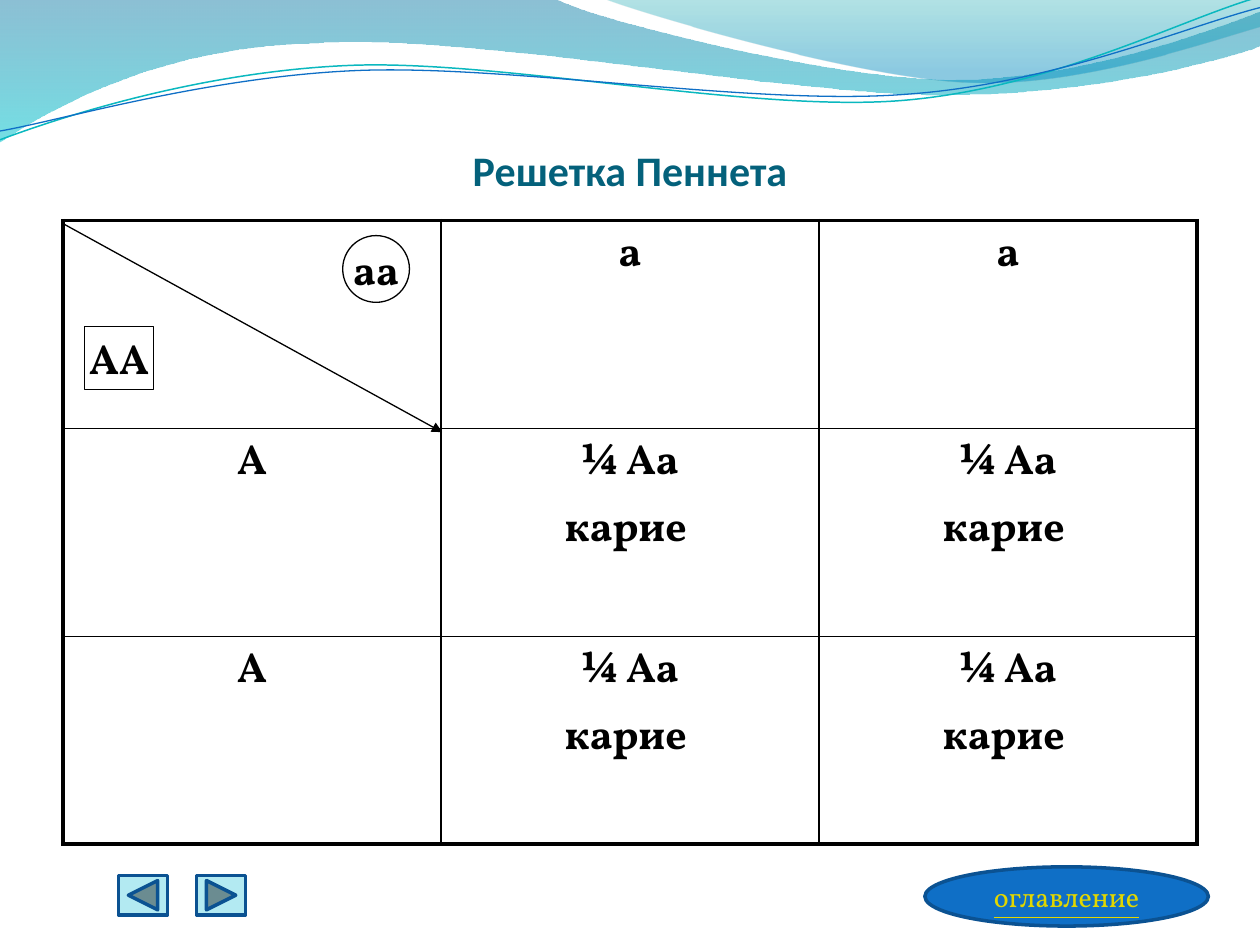
from math import cos, radians, sin

from lxml.etree import SubElement
from pptx import Presentation
from pptx.dml.color import RGBColor
from pptx.enum.shapes import MSO_CONNECTOR, MSO_SHAPE as SHAPE
from pptx.enum.text import MSO_ANCHOR as ANCHOR, PP_ALIGN as ALIGN
from pptx.oxml import parse_xml
from pptx.oxml.ns import nsdecls, qn
from pptx.util import Inches, Pt

INK = {"black": "000000", "title": "04617B", "blue": "0F6FC6", "edge": "0B5292",
       "pale": "B3EAF2", "link": "E2D700", "teal": "0AB8BF"}
rgb = {name: RGBColor.from_string(code) for name, code in INK.items()}

deck = Presentation()
deck.slide_width, deck.slide_height = Inches(10), Inches(7.5)
page = deck.slides.add_slide(deck.slide_layouts[6])
shapes = page.shapes


def write(para, text, size=24, font="Vollkorn", ink="black", bold=True):
    """Add one centred run to a paragraph."""
    para.alignment = ALIGN.CENTER
    run = para.add_run()
    run.text = text
    run.font.size, run.font.name, run.font.bold = Pt(size), font, bold
    run.font.color.rgb = rgb[ink]
    return run


def draw(box, start, parts, closed, turn=0):
    """Draw lines (2 numbers) and cubic curves (6 numbers) in a box turned by some degrees."""
    x, y, w, h = box
    path = shapes.build_freeform(Inches(x), Inches(y))
    path.add_line_segments([(Inches(x + w), Inches(y)), (Inches(x + w), Inches(y + h))])
    form = path.convert_to_shape()
    form.shadow.inherit = False
    form.rotation = turn
    a = radians(-turn)
    trace = form._element.spPr.find(".//" + qn("a:path"))
    for node in list(trace):
        trace.remove(node)
    for i, part in enumerate([start, *parts]):
        tag = "a:moveTo" if i == 0 else "a:lnTo" if len(part) == 2 else "a:cubicBezTo"
        node = SubElement(trace, qn(tag))
        for px, py in zip(part[::2], part[1::2]):
            dx, dy = px - x - w / 2, py - y - h / 2
            spot = SubElement(node, qn("a:pt"))
            spot.set("x", str(Inches(w / 2 + dx * cos(a) - dy * sin(a))))
            spot.set("y", str(Inches(h / 2 + dx * sin(a) + dy * cos(a))))
    if closed:
        SubElement(trace, qn("a:close"))
    return form


# Wave bands: box, start, outline, gradient stops (position, colour, opacity)
bands = [
    ((-0.01, -0.01, 10.02, 1.14), (0, 0),
     [(4.4, -0.01), (4.76, 0.17, 6.64, 0.63, 7.58, 0.63),
      (8.53, 0.63, 9.58, 0.26, 10, 0.09), (10.01, 0.36),
      (9.83, 0.44, 8.7, 0.76, 7.46, 0.75), (6.22, 0.75, 3.82, 0.28, 2.57, 0.34),
      (1.29, 0.36, 0.46, 0.83, -0.01, 1.13), (0, 0)],
     [(0, "0074A1", 45), (1, "00C6CF", 55)]),
    ((4.79, -0.01, 5.21, 0.7), (4.79, -0.01),
     [(5.09, 0.11, 6.82, 0.62, 7.69, 0.65),
      (8.56, 0.69, 9.61, 0.32, 10, 0.21), (10, 0), (4.79, -0.01)],
     [(0, "00A1A9", 30), (0.8, "008BBF", 45)]),
]
for box, start, parts, stops in bands:
    band = draw(box, start, parts, True)
    band.line.fill.background()
    band.fill.gradient()
    band.fill.gradient_angle = 270
    for stop, (place, code, _) in zip(band.fill.gradient_stops, stops):
        stop.position = place
        stop.color.rgb = RGBColor.from_string(code)
    for tint, (_, _, clear) in zip(band._element.spPr.iter(qn("a:srgbClr")), stops):
        SubElement(tint, qn("a:alpha")).set("val", str(clear * 1000))

# Wave lines
waves = [
    ((-0.02, 0.22, 10.02, 0.71), (0, 1.11),
     [(0.48, 0.93, 1.58, 0.57, 2.77, 0.52), (3.95, 0.47, 5.93, 0.89, 7.13, 0.8),
      (8.33, 0.71, 9.38, 0.15, 9.98, -0.02)], "teal", 0.85),
    ((-0.02, 0.3, 10.03, 0.58), (0, 1.04),
     [(0.47, 0.96, 1.64, 0.61, 2.83, 0.56), (4.03, 0.51, 5.97, 0.84, 7.17, 0.75),
      (8.36, 0.67, 9.41, 0.21, 10, 0.06)], "blue", 0.75),
]
for box, start, parts, ink, width in waves:
    wave = draw(box, start, parts, False, -2.7)
    wave.fill.background()
    wave.line.color.rgb, wave.line.width = rgb[ink], Pt(width)

# Title
title = shapes.add_textbox(Inches(0.5), Inches(0.3), Inches(9), Inches(1.25))
frame = title.text_frame
frame.word_wrap = True
frame.vertical_anchor = ANCHOR.BOTTOM
frame.margin_left = frame.margin_right = frame.margin_bottom = 0
write(frame.paragraphs[0], "Решетка Пеннета", font="Calibri", ink="title")

# Punnett square: thick frame, thin inner lines
cross = ["¼ Аа", "карие "]
rows = [[[], ["а"], ["а"]], [["А"], cross, cross], [["А"], cross, cross]]
grid = shapes.add_table(3, 3, Inches(0.5), Inches(1.75), Inches(9), Inches(4.95)).table
grid.first_row = grid.horz_banding = False
for r, row in enumerate(rows):
    for c, lines in enumerate(row):
        cell = grid.cell(r, c)
        cell.fill.background()
        outer = {"L": c == 0, "R": c == 2, "T": r == 0, "B": r == 2}
        props = cell._tc.get_or_add_tcPr()
        for i, (side, thick) in enumerate(outer.items()):
            width = Pt(2.25 if thick else 1)
            props.insert(i, parse_xml(
                f'<a:ln{side} {nsdecls("a")} w="{width}"><a:solidFill>'
                f'<a:srgbClr val="{INK["black"]}"/></a:solidFill></a:ln{side}>'))
        for i, line in enumerate(lines):
            frame = cell.text_frame
            para = frame.add_paragraph() if i else frame.paragraphs[0]
            para.space_before = Pt(4.8)
            write(para, line)

# Diagonal arrow in the corner cell
arrow = shapes.add_connector(MSO_CONNECTOR.STRAIGHT, Inches(0.51), Inches(1.78),
                             Inches(3.51), Inches(3.43))
arrow.line.color.rgb, arrow.line.width = rgb["black"], Pt(0.75)
SubElement(arrow.line._get_or_add_ln(), qn("a:tailEnd")).set("type", "triangle")
SubElement(arrow._element.spPr, qn("a:effectLst"))

# Parent marks, navigation buttons and contents button
items = [
    (SHAPE.OVAL, 2.72, 1.87, 0.53, 0.53, None, "аа"),
    (SHAPE.RECTANGLE, 0.67, 2.59, 0.55, 0.5, None, "АА"),
    (SHAPE.ACTION_BUTTON_FORWARD_OR_NEXT, 1.56, 6.95, 0.39, 0.31, "pale", ""),
    (SHAPE.ACTION_BUTTON_BACK_OR_PREVIOUS, 0.94, 6.95, 0.39, 0.31, "pale", ""),
    (SHAPE.OVAL, 7.34, 6.88, 2.25, 0.47, "blue", "оглавление"),
]
for kind, x, y, w, h, fill, text in items:
    item = shapes.add_shape(kind, Inches(x), Inches(y), Inches(w), Inches(h))
    item.shadow.inherit = False
    item.line.color.rgb = rgb["edge" if fill else "black"]
    item.line.width = Pt(2 if fill else 0.75)
    if fill:
        item.fill.solid()
        item.fill.fore_color.rgb = rgb[fill]
    else:
        item.fill.background()
    frame = item.text_frame
    frame.word_wrap = bool(fill)
    frame.vertical_anchor = ANCHOR.MIDDLE
    if text and fill:
        run = write(frame.paragraphs[0], text, 16, ink="link", bold=False)
        run.font.underline = True
        run._r.rPr.find(qn("a:solidFill")).addnext(parse_xml(
            f'<a:uFill {nsdecls("a")}><a:solidFill><a:srgbClr val="{INK["link"]}"/>'
            '</a:solidFill></a:uFill>'))
    elif text:
        write(frame.paragraphs[0], text)

deck.save("out.pptx")
